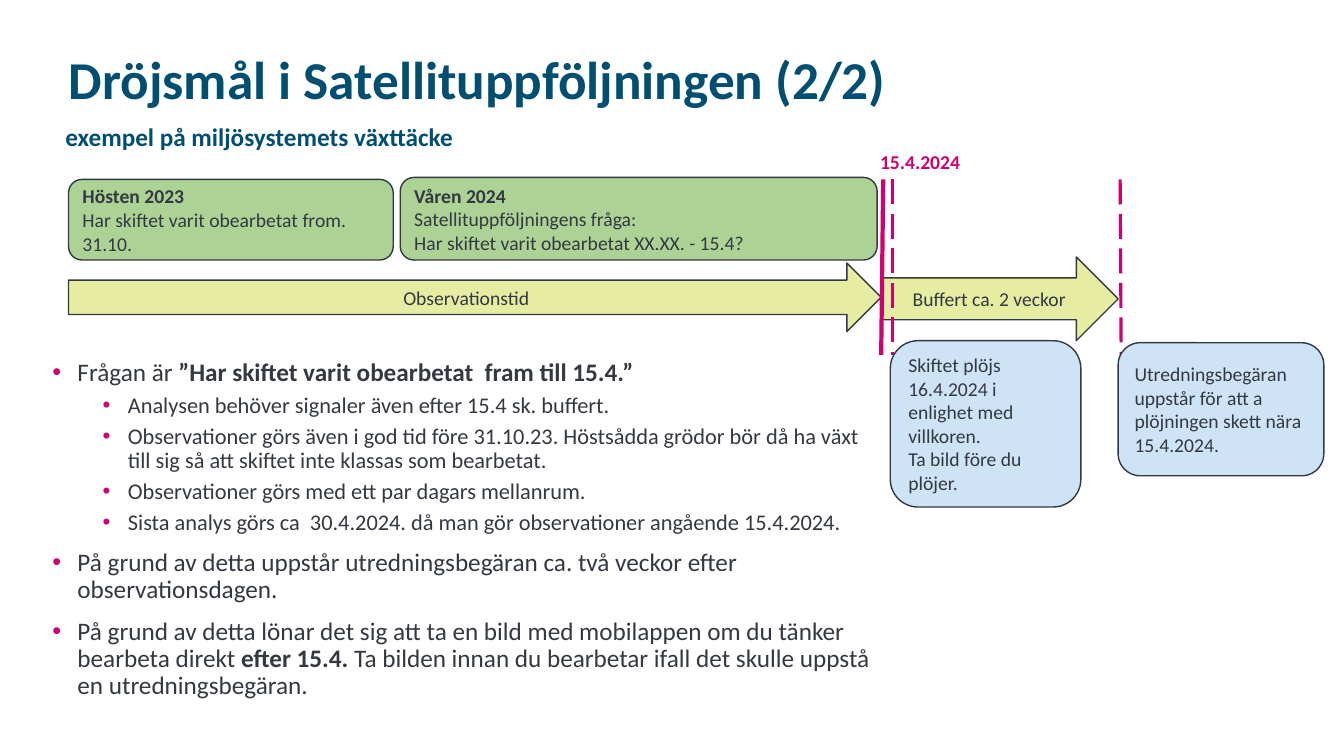
from lxml import etree
from pptx import Presentation
from pptx.dml.color import RGBColor
from pptx.enum.dml import MSO_LINE
from pptx.enum.shapes import MSO_CONNECTOR, MSO_SHAPE
from pptx.enum.text import MSO_ANCHOR, MSO_AUTO_SIZE, PP_ALIGN
from pptx.oxml.ns import qn
from pptx.util import Inches, Pt

FONT = "Calibri"
TITLE, INK, ACCENT = "004F71", "343841", "D0006F"
YELLOW, BLUE, GREEN = "E6EDA3", "CEE3F5", "ADD296"

# Each paragraph is a list of (text, bold) runs
AUTUMN = [[("Hösten 2023", True)],
          [("Har skiftet varit obearbetat from. 31.10.", False)]]
SPRING = [[("Våren 2024", True)],
          [("Satellituppföljningens fråga:", False)],
          [("Har skiftet varit obearbetat XX.XX. - 15.4?", False)]]
PLOUGHING = [[("Skiftet plöjs 16.4.2024 i enlighet med villkoren.", False)],
             [("Ta bild före du plöjer.", False)]]
REQUEST = [[("Utredningsbegäran uppstår för att a plöjningen skett nära "
             "15.4.2024.", False)]]

# Bullets: (level, runs)
BULLETS = [
    (0, [("Frågan är ", False),
         ("”Har skiftet varit obearbetat  fram till 15.4.”", True)]),
    (1, [("Analysen behöver signaler även efter 15.4 sk. buffert.", False)]),
    (1, [("Observationer görs även i god tid före 31.10.23. Höstsådda grödor "
          "bör då ha växt till sig så att skiftet inte klassas som bearbetat.",
          False)]),
    (1, [("Observationer görs med ett par dagars mellanrum.", False)]),
    (1, [("Sista analys görs ca  30.4.2024. då man gör observationer "
          "angående 15.4.2024.", False)]),
    (0, [("På grund av detta uppstår utredningsbegäran ca. två veckor efter "
          "observationsdagen.", False)]),
    (0, [("På grund av detta lönar det sig att ta en bild med mobilappen om "
          "du tänker bearbeta direkt ", False),
         ("efter 15.4. ", True),
         ("Ta bilden innan du bearbetar ifall det skulle uppstå en "
          "utredningsbegäran.", False)]),
]


def rgb(color):
    return RGBColor.from_string(color)


def add_runs(p, runs, size, color):
    for text, bold in runs:
        r = p.add_run()
        r.text = text
        r.font.name = FONT
        r.font.size = Pt(size)
        r.font.bold = bold
        r.font.color.rgb = rgb(color)


def next_paragraph(tf, i):
    return tf.add_paragraph() if i else tf.paragraphs[0]


def add_panel(s, kind, box, fill, paragraphs, align=PP_ALIGN.LEFT):
    sp = s.shapes.add_shape(kind, *map(Inches, box))
    sp.shadow.inherit = False
    sp.fill.solid()
    sp.fill.fore_color.rgb = rgb(fill)
    sp.line.color.rgb = rgb(INK)
    sp.line.width = Pt(1)
    tf = sp.text_frame
    tf.word_wrap = True
    tf.vertical_anchor = MSO_ANCHOR.MIDDLE
    for i, runs in enumerate(paragraphs):
        p = next_paragraph(tf, i)
        p.alignment = align
        add_runs(p, runs, 14, INK)


def add_date_line(s, x1, x2, width, dash=None):
    line = s.shapes.add_connector(MSO_CONNECTOR.STRAIGHT, Inches(x1),
                                  Inches(1.78), Inches(x2), Inches(3.52))
    line.line.color.rgb = rgb(ACCENT)
    line.line.width = Pt(width)
    if dash:
        line.line.dash_style = dash
    etree.SubElement(line._element.spPr, qn("a:effectLst"))


def add_text_box(s, box, anchor=MSO_ANCHOR.TOP):
    tf = s.shapes.add_textbox(*map(Inches, box)).text_frame
    tf.word_wrap = True
    tf.vertical_anchor = anchor
    return tf


def add_bullet_mark(p, level):
    pPr = p._p.get_or_add_pPr()
    pPr.set("marL", str(Inches(0.25 + 0.5 * level)))
    pPr.set("indent", str(Inches(-0.25)))
    color = etree.SubElement(pPr, qn("a:buClr"))
    etree.SubElement(color, qn("a:srgbClr"), val=ACCENT)
    etree.SubElement(pPr, qn("a:buFont"), typeface="Arial")
    etree.SubElement(pPr, qn("a:buChar"), char="•")


def add_bullets(s, box, bullets):
    tf = add_text_box(s, box)
    for i, (level, runs) in enumerate(bullets):
        p = next_paragraph(tf, i)
        add_bullet_mark(p, level)
        p.level = level
        p.line_spacing = 0.9
        p.space_before = Pt((5 if level else 10) if i else 0)
        add_runs(p, runs, 16 if level else 18, INK)


def set_title(s, text):
    sp = s.shapes.title
    sp.left, sp.top, sp.width, sp.height = map(Inches, (0.58, 0.4, 9.19, 0.82))
    tf = sp.text_frame
    tf.auto_size = MSO_AUTO_SIZE.NONE
    tf.vertical_anchor = MSO_ANCHOR.MIDDLE
    p = tf.paragraphs[0]
    p.alignment = PP_ALIGN.LEFT
    p.line_spacing = Pt(40)
    add_runs(p, [(text, True)], 38, TITLE)


def main():
    prs = Presentation()
    prs.slide_width, prs.slide_height = Inches(13.33), Inches(7.5)
    s = prs.slides.add_slide(prs.slide_layouts[5])
    set_title(s, "Dröjsmål i Satellituppföljningen (2/2)")

    # Timeline arrows
    arrow, rounded = MSO_SHAPE.RIGHT_ARROW, MSO_SHAPE.ROUNDED_RECTANGLE
    add_panel(s, arrow, (0.68, 2.61, 8.06, 0.68), YELLOW,
              [[("Observationstid", False)]], PP_ALIGN.CENTER)
    add_panel(s, arrow, (8.74, 2.55, 2.35, 0.83), YELLOW,
              [[("Buffert ca. 2 veckor", False)]], PP_ALIGN.CENTER)

    # Deadline and buffer limits
    add_date_line(s, 8.76, 8.74, 3)
    add_date_line(s, 8.85, 8.85, 2.25, MSO_LINE.LONG_DASH)
    add_date_line(s, 11.11, 11.12, 2.25, MSO_LINE.LONG_DASH)

    # Events below and seasons above the timeline
    add_panel(s, rounded, (8.83, 3.38, 1.89, 1.65), BLUE, PLOUGHING)
    add_panel(s, rounded, (11.09, 3.4, 2.04, 1.32), BLUE, REQUEST)
    add_panel(s, rounded, (0.68, 1.78, 3.22, 0.8), GREEN, AUTUMN)
    add_panel(s, rounded, (3.97, 1.76, 4.73, 0.82), GREEN, SPRING)

    # Date label and subtitle
    tf = add_text_box(s, (8.63, 1.44, 1.07, 0.34))
    add_runs(tf.paragraphs[0], [("15.4.2024", True)], 14, ACCENT)
    tf = add_text_box(s, (0.55, 1.1, 6.01, 0.5), MSO_ANCHOR.MIDDLE)
    add_runs(tf.paragraphs[0], [("exempel på miljösystemets växttäcke", True)],
             18, TITLE)

    # Explanation
    add_bullets(s, (0.42, 3.52, 8.41, 3.5), BULLETS)
    prs.save("out.pptx")


if __name__ == "__main__":
    main()
